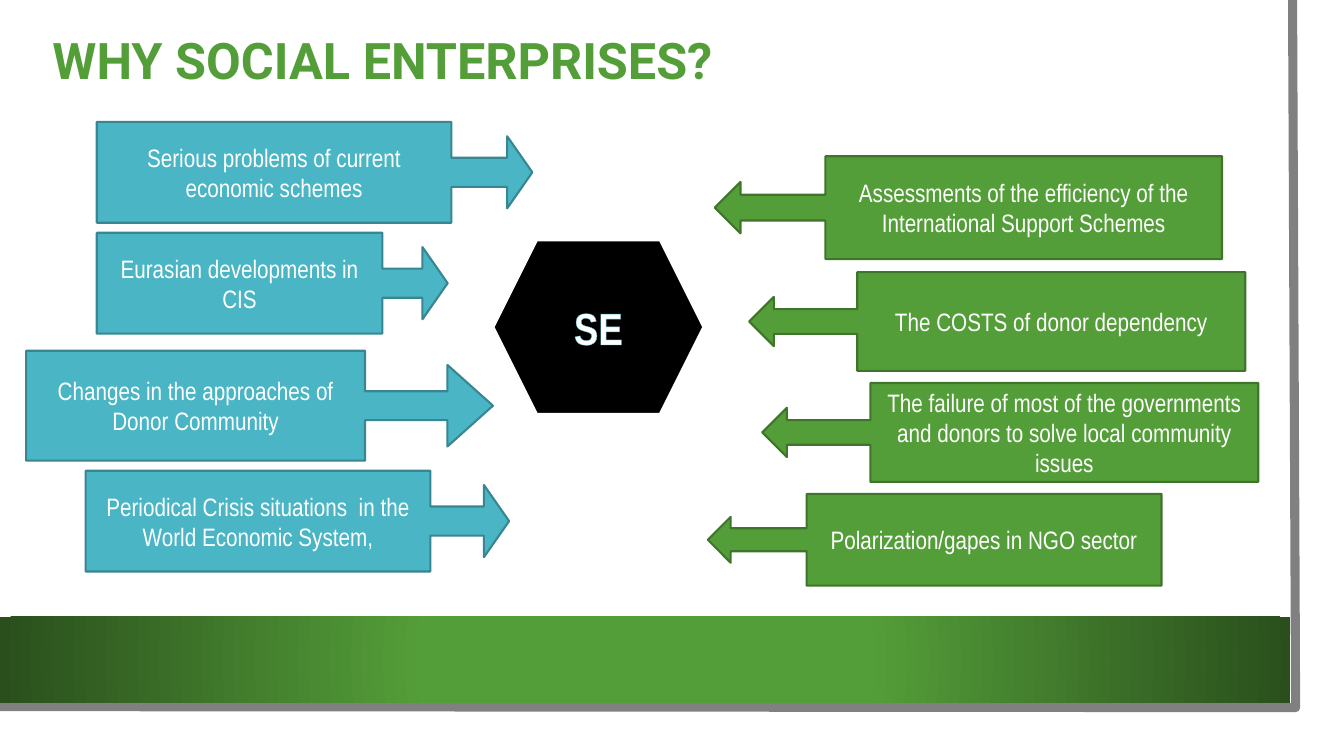
import pptx
import pptx.util
import pptx.dml.color
import pptx.enum.shapes
import pptx.enum.text
import pptx.oxml
import pptx.oxml.ns
from pptx.util import Inches

THEME = {
    "green": "549E39", "moss": "3E752A", "dark": "2A4F1C",
    "teal": "4AB5C4", "sea": "378691",
    "white": "FFFFFF", "black": "000000", "grey": "808080",
    "title": {"name": "Roboto", "size": pptx.util.Pt(36), "bold": True},
    "body": {"name": "Arial Narrow", "size": pptx.util.Pt(18), "bold": False},
    "hub": {"name": "Arial Narrow", "size": pptx.util.Pt(32), "bold": True},
}
KIND = pptx.enum.shapes.MSO_SHAPE
ALIGN = pptx.enum.text.PP_ALIGN
MIDDLE = pptx.enum.text.MSO_ANCHOR.MIDDLE


def color(name):
    return pptx.dml.color.RGBColor.from_string(THEME[name])


def write(shape, text, style, ink, align):
    frame = shape.text_frame
    frame.text = text
    frame.word_wrap = True
    frame.vertical_anchor = MIDDLE
    para = frame.paragraphs[0]
    para.alignment = align
    font = para.runs[0].font
    for key, value in THEME[style].items():
        setattr(font, key, value)
    font.color.rgb = color(ink)
    return para


deck = pptx.Presentation()
deck.slide_width, deck.slide_height = Inches(13.33), Inches(7.5)
slide = deck.slides.add_slide(deck.slide_layouts[5])
shapes = slide.shapes

# Grey page edge
pen = shapes.build_freeform(Inches(12.82), 0)
pen.add_line_segments(
    [(Inches(12.85), Inches(7.02)), (Inches(-0.03), Inches(7.01))], close=False)
edge = pen.convert_to_shape()
edge.shadow.inherit = False
edge.fill.background()
edge.line.color.rgb = color("grey")
edge.line.width = pptx.util.Pt(6.5)

# Green band with a gradient spreading from its centre
band = shapes.add_shape(
    KIND.RECTANGLE, 0, Inches(6.12), Inches(12.8), Inches(0.85))
band.shadow.inherit = False
band.line.fill.background()
band.fill.background()
blank = band.fill._xPr.find(pptx.oxml.ns.qn("a:noFill"))
blank.getparent().replace(blank, pptx.oxml.parse_xml(
    f'<a:gradFill {pptx.oxml.ns.nsdecls("a")} rotWithShape="1"><a:gsLst>'
    f'<a:gs pos="34000"><a:srgbClr val="{THEME["green"]}"/></a:gs>'
    f'<a:gs pos="100000"><a:srgbClr val="{THEME["dark"]}"/></a:gs></a:gsLst>'
    '<a:path path="circle">'
    '<a:fillToRect l="50000" t="50000" r="50000" b="50000"/></a:path>'
    '</a:gradFill>'))

# Title
title = shapes.title
title.left, title.top = Inches(0.42), Inches(0)
title.width, title.height = Inches(12.19), Inches(1.26)
head = write(title, "WHY SOCIAL ENTERPRISES?", "title", "green", ALIGN.LEFT)
head.line_spacing = 0.9
title.text_frame.auto_size = pptx.enum.text.MSO_AUTO_SIZE.NONE

# Callouts pointing at the hub from both sides
SLIM = (0.289, 0.358, 0.25, 0.814)
WIDE = (0.262, 0.371, 0.414, 0.726)
LEAF = (0.25, 0.25, 0.25, 0.782)
causes = [
    (0.96, 1.21, 4.32, 1, SLIM, "Serious problems of current economic schemes"),
    (0.96, 2.31, 3.48, 1, SLIM, "Eurasian developments in CIS"),
    (0.26, 3.48, 4.63, 1.09, WIDE,
     "Changes in the approaches of Donor Community"),
    (0.85, 4.67, 4.2, 1, SLIM,
     "Periodical Crisis situations  in the World Economic System,"),
]
limits = [
    (7.09, 1.55, 5.03, 1.02, LEAF,
     "Assessments of the efficiency of the International Support Schemes"),
    (7.43, 2.7, 4.92, 0.98, LEAF, "The COSTS of donor dependency"),
    (7.56, 3.8, 4.92, 0.98, LEAF,
     "The failure of most of the governments and donors to solve "
     "local community issues"),
    (7.02, 4.9, 4.5, 0.91, LEAF, "Polarization/gapes in NGO sector"),
]
sides = [
    (KIND.RIGHT_ARROW_CALLOUT, "teal", "sea", causes),
    (KIND.LEFT_ARROW_CALLOUT, "green", "moss", limits),
]
for kind, fill, rim, items in sides:
    for left, top, width, height, bends, text in items:
        box = shapes.add_shape(
            kind, Inches(left), Inches(top), Inches(width), Inches(height))
        for spot, bend in enumerate(bends):
            box.adjustments[spot] = bend
        box.shadow.inherit = False
        box.fill.solid()
        box.fill.fore_color.rgb = color(fill)
        box.line.color.rgb = color(rim)
        box.line.width = pptx.util.Pt(1.5)
        write(box, text, "body", "white", ALIGN.CENTER)

# Central hub with outlined lettering
hub = shapes.add_shape(
    KIND.HEXAGON, Inches(4.89), Inches(2.38), Inches(2.09), Inches(1.73))
hub.shadow.inherit = False
hub.fill.solid()
hub.fill.fore_color.rgb = color("black")
hub.line.color.rgb = color("white")
hub.line.width = pptx.util.Pt(2)
label = write(hub, "SE", "hub", "white", ALIGN.CENTER)
label.runs[0].font._element.insert(0, pptx.oxml.parse_xml(
    f'<a:ln {pptx.oxml.ns.nsdecls("a")} w="{pptx.util.Pt(0.8)}"><a:solidFill>'
    f'<a:srgbClr val="{THEME["teal"]}"/></a:solidFill></a:ln>'))

deck.save("out.pptx")
